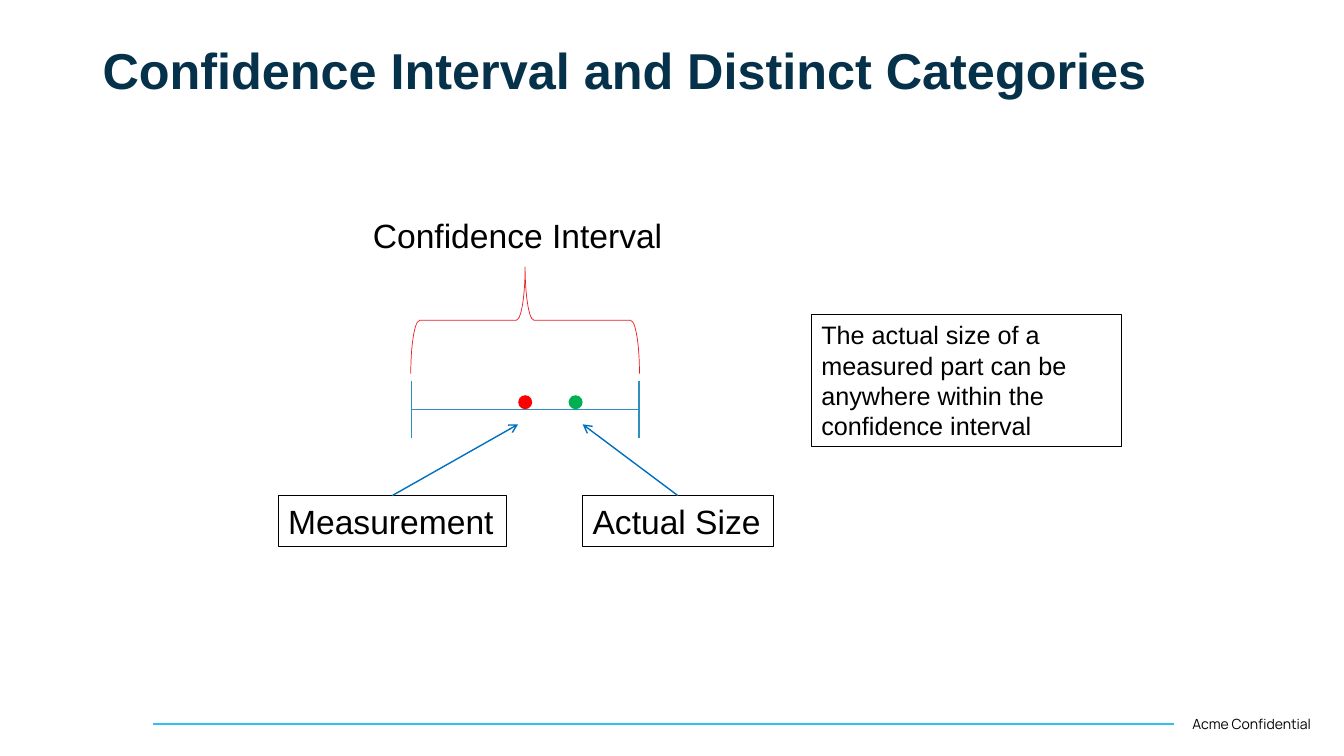
from dataclasses import dataclass

import pptx
import pptx.dml.color
import pptx.enum.shapes
import pptx.enum.text
import pptx.oxml.ns
import pptx.util
from lxml import etree

Pt = pptx.util.Pt
ARROW_FROM_TOP = 0


@dataclass(frozen=True)
class Theme:
    font: str = "Arial"
    footer_font: str = "Manrope"
    title_size: float = 36
    label_size: float = 24
    note_size: float = 18
    footer_size: float = 10
    navy: str = "05314A"
    black: str = "000000"
    footer_rule: str = "30BFEF"
    interval: str = "2F90C0"
    arrow: str = "0070C0"
    brace: str = "EC1C24"
    measured: str = "FF0000"
    actual: str = "00B050"


THEME = Theme()


@dataclass(frozen=True)
class Label:
    text: str
    x: float
    y: float
    w: float
    h: float
    size: float = THEME.label_size
    font: str = THEME.font
    color: str = THEME.black
    bold: bool = False
    wrap: bool = False
    border: bool = False
    fit: bool = True


@dataclass(frozen=True)
class Line:
    x1: float
    y1: float
    x2: float
    y2: float
    color: str
    width: float = 1


@dataclass(frozen=True)
class Pointer:
    label: Label
    x: float
    y: float


@dataclass(frozen=True)
class Dot:
    x: float
    color: str


LEFT, RIGHT = 293.8, 456.5
CENTER = (LEFT + RIGHT) / 2
TICK_TOP, AXIS_Y, TICK_BOTTOM = 272.2, 292.6, 313
DOT_Y, DOT_SIZE = 287.3, 10
BRACE_W, BRACE_H, BRACE_Y = 76.3, 163.4, 228.8
BOX_Y, BOX_H = 354, 36.4

TITLE = Label("Confidence Interval and Distinct Categories", 66.2, 20.2, 828, 63.4,
              size=THEME.title_size, color=THEME.navy, bold=True, wrap=True, fit=False)
LABELS = [
    Label("Acme Confidential", 844.6, 507.6, 106.6, 19.4,
          size=THEME.footer_size, font=THEME.footer_font, wrap=True),
    Label("Confidence Interval", 259.2, 149.8, 223.9, BOX_H),
    Label("The actual size of a measured part can be anywhere within the confidence interval",
          579.6, 224.8, 221.8, 94.5, size=THEME.note_size, wrap=True, border=True),
]
POINTERS = [
    Pointer(Label("Measurement", 198.7, BOX_Y, 163, BOX_H, border=True), 370.1, 303.1),
    Pointer(Label("Actual Size", 416.2, BOX_Y, 136, BOX_H, border=True), 416.2, 303.1),
]
LINES = [
    Line(109.4, 517, 838.8, 517, THEME.footer_rule, 1.5),
    Line(LEFT, TICK_TOP, LEFT, TICK_BOTTOM, THEME.interval),
    Line(RIGHT, TICK_TOP, RIGHT, TICK_BOTTOM, THEME.interval),
    Line(LEFT, AXIS_Y, RIGHT, AXIS_Y, THEME.interval),
]
DOTS = [Dot(CENTER, THEME.measured), Dot(CENTER + 36, THEME.actual)]


def rgb(color: str) -> pptx.dml.color.RGBColor:
    return pptx.dml.color.RGBColor.from_string(color)


def add_label(s: pptx.slide.Slide, label: Label) -> pptx.shapes.autoshape.Shape:
    sp = s.shapes.add_textbox(Pt(label.x), Pt(label.y), Pt(label.w), Pt(label.h))
    if label.border:
        sp.line.color.rgb = rgb(THEME.black)
        sp.line.width = Pt(0.75)
    tf = sp.text_frame
    tf.word_wrap = label.wrap
    if label.fit:
        tf.auto_size = pptx.enum.text.MSO_AUTO_SIZE.SHAPE_TO_FIT_TEXT
    p = tf.paragraphs[0]
    p.text = label.text
    p.font.name = label.font
    p.font.size = Pt(label.size)
    p.font.bold = label.bold
    p.font.color.rgb = rgb(label.color)
    return sp


def add_title(s: pptx.slide.Slide) -> None:
    tf = add_label(s, TITLE).text_frame
    tf.vertical_anchor = pptx.enum.text.MSO_ANCHOR.MIDDLE
    tf.paragraphs[0].line_spacing = 0.9


def add_line(s: pptx.slide.Slide, line: Line) -> pptx.shapes.connector.Connector:
    cxn = s.shapes.add_connector(pptx.enum.shapes.MSO_CONNECTOR.STRAIGHT,
                                 Pt(line.x1), Pt(line.y1), Pt(line.x2), Pt(line.y2))
    cxn.line.color.rgb = rgb(line.color)
    cxn.line.width = Pt(line.width)
    etree.SubElement(cxn._element.spPr, pptx.oxml.ns.qn("a:effectLst"))
    return cxn


def add_pointer(s: pptx.slide.Slide, pointer: Pointer) -> None:
    label = pointer.label
    box = add_label(s, label)
    cxn = add_line(s, Line(label.x + label.w / 2, label.y, pointer.x, pointer.y, THEME.arrow))
    cxn.begin_connect(box, ARROW_FROM_TOP)
    etree.SubElement(cxn.line._get_or_add_ln(), pptx.oxml.ns.qn("a:tailEnd"), type="arrow")


def add_dot(s: pptx.slide.Slide, dot: Dot) -> None:
    sp = s.shapes.add_shape(pptx.enum.shapes.MSO_SHAPE.OVAL, Pt(dot.x - DOT_SIZE / 2),
                            Pt(DOT_Y - DOT_SIZE / 2), Pt(DOT_SIZE), Pt(DOT_SIZE))
    sp.shadow.inherit = False
    sp.fill.solid()
    sp.fill.fore_color.rgb = rgb(dot.color)
    sp.line.fill.background()


def add_brace(s: pptx.slide.Slide) -> None:
    sp = s.shapes.add_shape(pptx.enum.shapes.MSO_SHAPE.RIGHT_BRACE, Pt(CENTER - BRACE_W / 2),
                            Pt(BRACE_Y - BRACE_H / 2), Pt(BRACE_W), Pt(BRACE_H))
    sp.rotation = 270
    sp.shadow.inherit = False
    sp.fill.background()
    sp.line.color.rgb = rgb(THEME.brace)
    sp.line.width = Pt(0.5)


def main() -> None:
    prs = pptx.Presentation()
    prs.slide_width, prs.slide_height = Pt(960), Pt(540)
    s = prs.slides.add_slide(prs.slide_layouts[6])
    add_title(s)
    for line in LINES:
        add_line(s, line)
    for dot in DOTS:
        add_dot(s, dot)
    add_brace(s)
    for label in LABELS:
        add_label(s, label)
    for pointer in POINTERS:
        add_pointer(s, pointer)
    prs.save("out.pptx")


if __name__ == "__main__":
    main()
